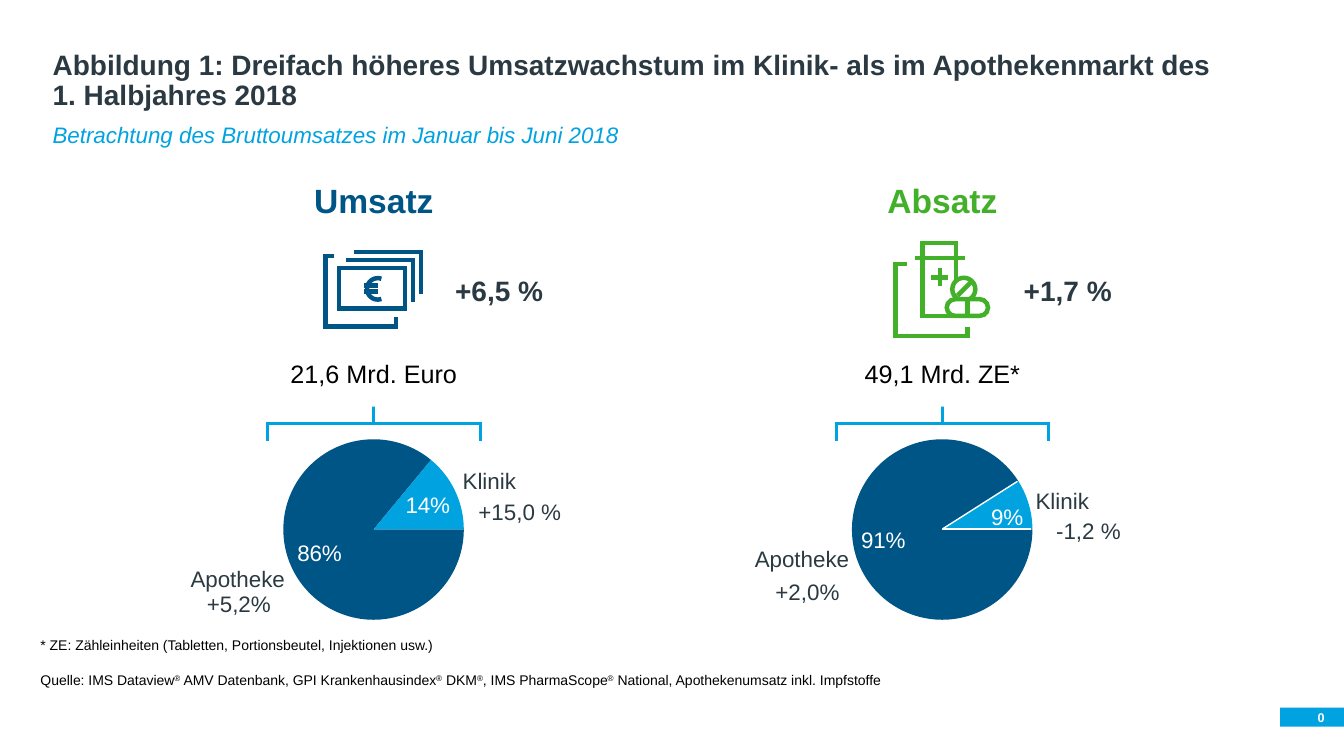
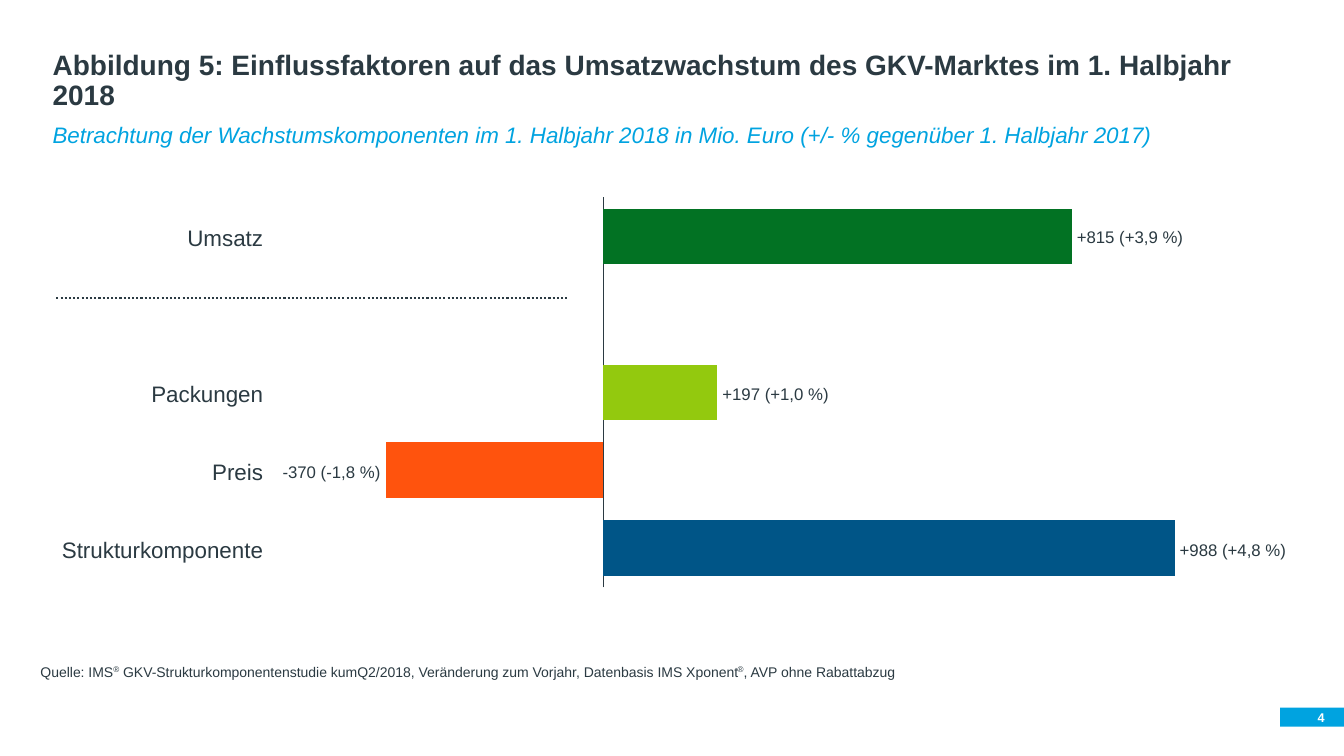
import itertools
import math

import lxml.etree
import pptx
import pptx.chart.data
import pptx.dml.color
import pptx.enum.chart
import pptx.enum.dml
import pptx.enum.shapes
import pptx.enum.text
import pptx.oxml.ns
import pptx.util

Cm = pptx.util.Cm
Pt = pptx.util.Pt
qn = pptx.oxml.ns.qn
Align = pptx.enum.text.PP_ALIGN
Anchor = pptx.enum.text.MSO_ANCHOR
Shape = pptx.enum.shapes.MSO_SHAPE

FONT = "Arial"
INK, BLACK, WHITE = "2B3A42", "000000", "FFFFFF"
SKY, NAVY, GREEN = "00A3E0", "005587", "43B02A"
FOREST, LIME, ORANGE = "027223", "93C90E", "FF530D"
ICON_STROKE = 3.2


def rgb(value):
    return pptx.dml.color.RGBColor.from_string(value)


def style_font(font, size, colour, bold=False, italic=False):
    font.name = FONT
    font.size = Pt(size)
    font.color.rgb = rgb(colour)
    font.bold = bold
    font.italic = italic


class Deck:
    def __init__(self):
        self.file = pptx.Presentation()
        self.file.slide_width = Cm(33.87)
        self.file.slide_height = Cm(19.05)
        self.page = None

    def add_page(self, title, subtitle, number):
        self.page = self.file.slides.add_slide(self.file.slide_layouts[1])
        heading, body = self.page.placeholders
        self.fill_placeholder(heading, title, 0.81, 2.13, Anchor.BOTTOM, 20, INK, bold=True)
        self.fill_placeholder(body, subtitle, 3, 1.12, Anchor.TOP, 16, SKY, italic=True)
        band = self.shape(Shape.RECTANGLE, 32.26, 17.83, 1.61, 0.48)
        band.fill.solid()
        band.fill.fore_color.rgb = rgb(SKY)
        band.line.fill.background()
        self.text(number, 33.38, 18.07, 1.12, 9, WHITE, Align.RIGHT, bold=True)

    def fill_placeholder(self, box, words, top, height, anchor, size, colour, **emphasis):
        box.left, box.top, box.width, box.height = Cm(1.07), Cm(top), Cm(32), Cm(height)
        frame = box.text_frame
        frame.word_wrap = True
        frame.auto_size = pptx.enum.text.MSO_AUTO_SIZE.NONE
        frame.vertical_anchor = anchor
        para = frame.paragraphs[0]
        para.text = words
        para.alignment = Align.LEFT
        para.line_spacing = 0.9
        para.space_before = Pt(0)
        properties = para._p.get_or_add_pPr()
        properties.set("marL", "0")
        properties.set("indent", "0")
        lxml.etree.SubElement(properties, qn("a:buNone"))
        style_font(para.font, size, colour, **emphasis)

    def frame(self, left, top, width, height, anchor):
        box = self.page.shapes.add_textbox(Cm(left), Cm(top), Cm(width), Cm(height))
        frame = box.text_frame
        frame.word_wrap = True
        frame.vertical_anchor = anchor
        frame.margin_left = frame.margin_right = frame.margin_top = frame.margin_bottom = 0
        return frame

    def text(self, words, x, middle, width, size, colour=INK, align=Align.LEFT, bold=False):
        shift = {Align.LEFT: 0, Align.CENTER: width / 2, Align.RIGHT: width}[align]
        height = size * 0.042
        frame = self.frame(x - shift, middle - height / 2, width, height, Anchor.MIDDLE)
        para = frame.paragraphs[0]
        para.text = words
        para.alignment = align
        style_font(para.font, size, colour, bold)

    def notes(self, lines, top, colour):
        frame = self.frame(1.02, top, 24.9, 0.43 * len(lines), Anchor.TOP)
        for index, line in enumerate(lines):
            para = frame.add_paragraph() if index else frame.paragraphs[0]
            if index:
                para.space_before = Pt(13)
            style_font(para.font, 10, colour)
            for piece in line.replace("®", "|®|").split("|"):
                span = para.add_run()
                span.text = piece
                if piece == "®":
                    span._r.get_or_add_rPr().set("baseline", "30000")

    def shape(self, kind, left, top, width, height):
        shape = self.page.shapes.add_shape(kind, Cm(left), Cm(top), Cm(width), Cm(height))
        shape.shadow.inherit = False
        return shape

    def stroke(self, item, colour, width):
        item.line.color.rgb = rgb(colour)
        item.line.width = Pt(width)
        miter = lxml.etree.SubElement(item.line._get_or_add_ln(), qn("a:miter"))
        miter.set("lim", "800000")

    def outline(self, kind, left, top, width, height, colour):
        shape = self.shape(kind, left, top, width, height)
        shape.fill.solid()
        shape.fill.fore_color.rgb = rgb(WHITE)
        self.stroke(shape, colour, ICON_STROKE)
        return shape

    def polyline(self, points, colour):
        corners = [(Cm(x), Cm(y)) for x, y in points]
        builder = self.page.shapes.build_freeform(*corners[0])
        builder.add_line_segments(corners[1:], close=False)
        shape = builder.convert_to_shape()
        shape.shadow.inherit = False
        shape.fill.background()
        self.stroke(shape, colour, ICON_STROKE)

    def line(self, x1, y1, x2, y2, colour, width=ICON_STROKE, dash=None):
        line = self.page.shapes.add_connector(
            pptx.enum.shapes.MSO_CONNECTOR.STRAIGHT, Cm(x1), Cm(y1), Cm(x2), Cm(y2))
        line.line.color.rgb = rgb(colour)
        line.line.width = Pt(width)
        if dash:
            line.line.dash_style = dash
        lxml.etree.SubElement(line._element.spPr, qn("a:effectLst"))

    def brace(self, center, middle, span, depth):
        brace = self.shape(Shape.LEFT_BRACE, center - depth / 2, middle - span / 2, depth, span)
        brace.rotation = 90
        brace.adjustments[0] = 0
        brace.adjustments[1] = 0.5
        brace.fill.background()
        self.stroke(brace, SKY, 2.25)

    def chart(self, kind, place, values, colours, layout):
        data = pptx.chart.data.CategoryChartData()
        data.categories = [str(index + 1) for index in range(len(values))]
        data.add_series("Series 1", values)
        chart = self.page.shapes.add_chart(kind, *map(Cm, place), data).chart
        chart.has_legend = False
        chart.has_title = False
        style_font(chart.font, 10, INK)
        plot = chart.plots[0]
        plot.vary_by_categories = False
        for index, colour in enumerate(colours):
            if colour:
                fill = plot.series[0].points[index].format.fill
                fill.solid()
                fill.fore_color.rgb = rgb(colour)
        area = chart._chartSpace.chart.plotArea
        for old in area.findall(qn("c:layout")):
            area.remove(old)
        holder = lxml.etree.Element(qn("c:layout"))
        area.insert(0, holder)
        manual = lxml.etree.SubElement(holder, qn("c:manualLayout"))
        settings = [("layoutTarget", "inner"), ("xMode", "edge"), ("yMode", "edge")]
        for name, value in settings + list(zip("xywh", layout)):
            lxml.etree.SubElement(manual, qn("c:" + name)).set("val", str(value))
        return chart

    def pie(self, center, values):
        chart = self.chart(pptx.enum.chart.XL_CHART_TYPE.PIE, (center - 4.08, 10.82, 8.15, 5),
                           values, [NAVY, SKY], (0.22, 0.05, 0.56, 0.91))
        plot = chart.plots[0]
        plot.has_data_labels = True
        labels = plot.data_labels
        labels.show_value = True
        labels.show_percentage = False
        labels.number_format = '0"%"'
        labels.number_format_is_linked = False
        labels.position = pptx.enum.chart.XL_LABEL_POSITION.INSIDE_END
        style_font(labels.font, 16, WHITE)
        for old in plot._element.findall(qn("c:firstSliceAng")):
            plot._element.remove(old)
        lxml.etree.SubElement(plot._element, qn("c:firstSliceAng")).set("val", "90")


def draw_money(deck):
    deck.polyline([(8.41, 6.45), (8.2, 6.45), (8.2, 8.23), (9.98, 8.23), (9.98, 8)], NAVY)
    for shift in (0, 0.2):
        deck.polyline([(8.71 + shift, 6.55 - shift), (10.41 + shift, 6.55 - shift),
                       (10.41 + shift, 7.62 - shift)], NAVY)
    deck.outline(Shape.RECTANGLE, 8.55, 6.76, 1.66, 1.02, NAVY)
    angles = [math.radians(angle) for angle in range(70, 291, 10)]
    deck.polyline([(9.52 + 0.27 * math.cos(a), 7.28 + 0.27 * math.sin(a)) for a in angles], NAVY)
    for y in (7.2, 7.35):
        deck.line(9.17, y, 9.52, y, NAVY)


def draw_medicine(deck):
    deck.polyline([(22.86, 6.65), (22.57, 6.65), (22.57, 8.47), (24.38, 8.47), (24.38, 8.23)],
                  GREEN)
    deck.outline(Shape.RECTANGLE, 23.25, 6.12, 0.85, 1.84, GREEN)
    deck.line(23.06, 6.5, 24.31, 6.5, GREEN)
    deck.line(23.47, 6.99, 23.9, 6.99, GREEN)
    deck.line(23.69, 6.76, 23.69, 7.21, GREEN)
    deck.outline(Shape.OVAL, 24, 7, 0.58, 0.58, GREEN)
    deck.line(24.13, 7.45, 24.47, 7.11, GREEN)
    pill = deck.outline(Shape.ROUNDED_RECTANGLE, 23.86, 7.54, 1.04, 0.42, GREEN)
    pill.adjustments[0] = 0.5
    deck.line(24.38, 7.54, 24.38, 7.96, GREEN)


def draw_market(deck, center, heading, colour, growth, total, shares, reach, clinic, pharmacy):
    deck.text(heading, center, 5.05, 5, 24, colour, Align.CENTER, bold=True)
    deck.text(growth, center + 2.05, 7.32, 3, 20, bold=True)
    deck.text(total, center, 9.4, 6, 18, BLACK, Align.CENTER)
    deck.pie(center, shares)
    deck.brace(center, 10.68, 5.36, 0.86)
    clinic_growth, clinic_y, clinic_gap = clinic
    pharmacy_growth, pharmacy_y, pharmacy_gap = pharmacy
    deck.text("Klinik", center + reach, clinic_y, 2, 16)
    deck.text(clinic_growth, center + 3.68, clinic_y + clinic_gap, 2.77, 16, align=Align.CENTER)
    deck.text("Apotheke", center - reach, pharmacy_y, 3, 16, align=Align.RIGHT)
    deck.text(pharmacy_growth, center - 3.4, pharmacy_y + pharmacy_gap, 2.4, 16,
              align=Align.CENTER)


def build_markets(deck):
    deck.add_page("Abbildung 1: Dreifach höheres Umsatzwachstum im Klinik- als im "
                  "Apothekenmarkt des\n1. Halbjahres 2018",
                  "Betrachtung des Bruttoumsatzes im Januar bis Juni 2018", "0")
    draw_market(deck, 9.42, "Umsatz", NAVY, "+6,5 %", "21,6 Mrd. Euro", (86, 14), 2.24,
                ("+15,0 %", 12.12, 0.78), ("+5,2%", 14.57, 0.65))
    draw_market(deck, 23.75, "Absatz", GREEN, "+1,7 %", "49,1 Mrd. ZE*", (91, 9), 2.35,
                ("-1,2 %", 12.62, 0.76), ("+2,0%", 14.07, 0.84))
    for angle in (0, 2 * math.pi * 0.09):
        deck.line(23.75, 13.33, 23.75 + 2.24 * math.cos(angle),
                  13.33 - 2.24 * math.sin(angle), WHITE, 1)
    draw_money(deck)
    draw_medicine(deck)
    deck.notes(["* ZE: Zähleinheiten (Tabletten, Portionsbeutel, Injektionen usw.)",
                "Quelle: IMS Dataview® AMV Datenbank, GPI Krankenhausindex® DKM®, "
                "IMS PharmaScope® National, Apothekenumsatz inkl. Impfstoffe"], 16.05, BLACK)


def build_factors(deck):
    deck.add_page("Abbildung 5: Einflussfaktoren auf das Umsatzwachstum des GKV-Marktes "
                  "im 1. Halbjahr 2018",
                  "Betrachtung der Wachstumskomponenten im 1. Halbjahr 2018 in Mio. Euro "
                  "(+/- % gegenüber 1. Halbjahr 2017)", "4")
    rows = [("Umsatz", 82, "+815 (+3,9 %)", FOREST),
            (None, None, None, None),
            ("Packungen", 20, "+197 (+1,0 %)", LIME),
            ("Preis", -38, "-370 (-1,8 %)", ORANGE),
            ("Strukturkomponente", 100, "+988 (+4,8 %)", NAVY)]
    names, values, notes, colours = zip(*rows)
    low, high = -38, 100
    left, width = 9.72, 19.88
    chart = deck.chart(pptx.enum.chart.XL_CHART_TYPE.BAR_STACKED, (9.5, 4.75, 20.35, 10.29),
                       values, colours, (0.011, 0.022, 0.977, 0.955))
    plot = chart.plots[0]
    plot.gap_width = 40
    plot.overlap = 100
    plot.series[0].invert_if_negative = False
    chart.value_axis.minimum_scale = low
    chart.value_axis.maximum_scale = high
    chart.value_axis.has_major_gridlines = False
    chart.value_axis.visible = False
    axis = chart.category_axis
    axis.reverse_order = True
    axis.tick_label_position = pptx.enum.chart.XL_TICK_LABEL_POSITION.NONE
    axis.major_tick_mark = pptx.enum.chart.XL_TICK_MARK.NONE
    axis.format.line.color.rgb = rgb(INK)
    axis.format.line.width = Pt(0.75)
    for name, value, note, middle in zip(names, values, notes, itertools.count(5.98, 1.97)):
        if name:
            side = math.copysign(1, value)
            end = left + width * (value - low) / (high - low) + 0.13 * side
            deck.text(name, 6.63, middle, 5.5, 16, align=Align.RIGHT)
            deck.text(note, end, middle, 3, 12, align=Align.LEFT if side > 0 else Align.RIGHT)
    deck.line(1.42, 7.52, 14.33, 7.52, INK, 1.5, pptx.enum.dml.MSO_LINE.ROUND_DOT)
    deck.notes(["Quelle: IMS® GKV-Strukturkomponentenstudie kumQ2/2018, Veränderung zum "
                "Vorjahr, Datenbasis IMS Xponent®, AVP ohne Rabattabzug"], 16.71, INK)


def main():
    deck = Deck()
    build_markets(deck)
    build_factors(deck)
    deck.file.save("out.pptx")


if __name__ == "__main__":
    main()
